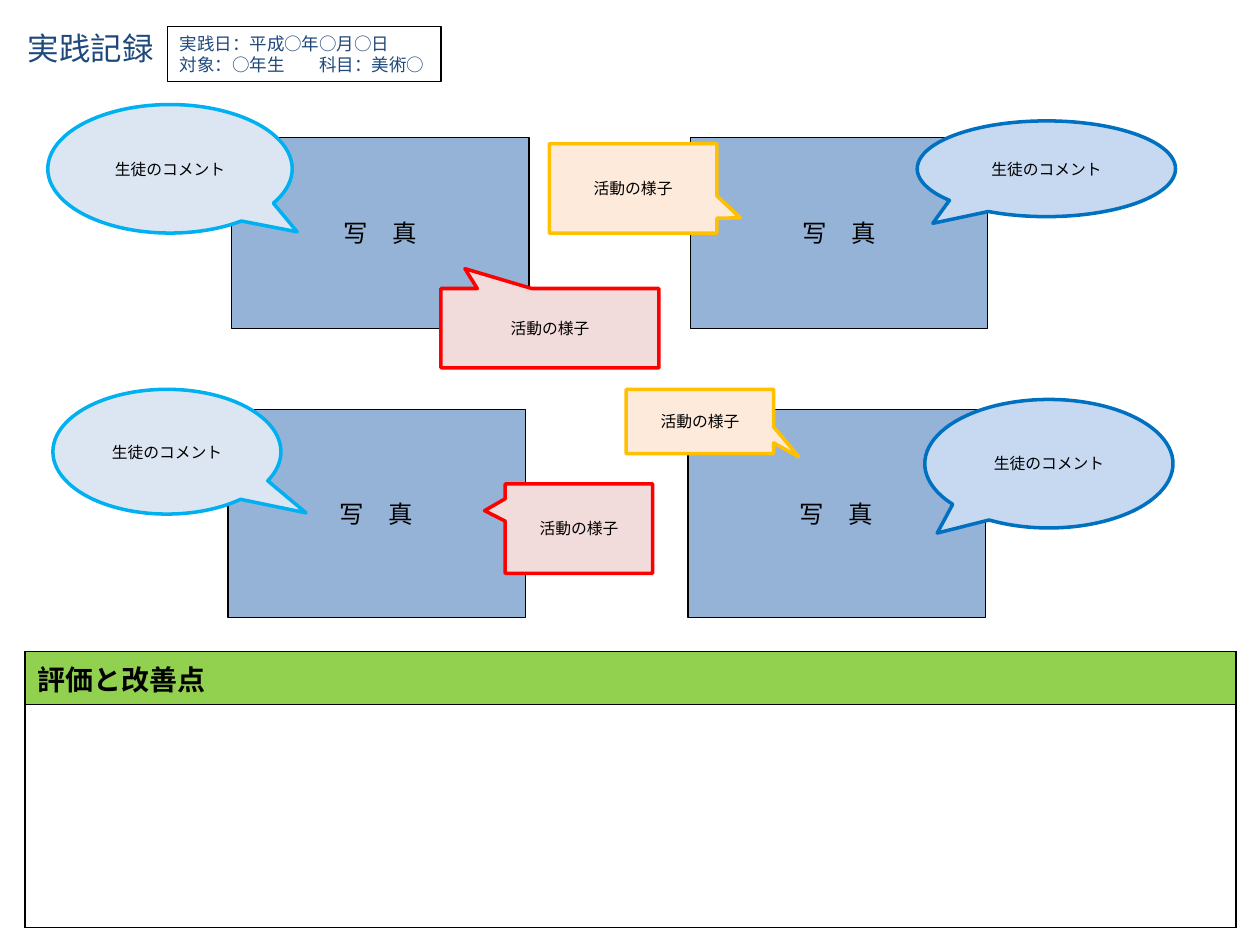
"""Build a one-page practice record with photo areas, comments and an evaluation table."""
from lxml import etree
from pptx import Presentation
from pptx.dml.color import RGBColor
from pptx.enum.shapes import MSO_SHAPE
from pptx.enum.text import MSO_ANCHOR, PP_ALIGN
from pptx.oxml.ns import qn
from pptx.util import Inches, Pt

RECTANGLE = MSO_SHAPE.RECTANGLE
OVAL_CALLOUT = MSO_SHAPE.OVAL_CALLOUT
RECT_CALLOUT = MSO_SHAPE.RECTANGULAR_CALLOUT
TOP, MIDDLE = MSO_ANCHOR.TOP, MSO_ANCHOR.MIDDLE
LEFT, CENTER = PP_ALIGN.LEFT, PP_ALIGN.CENTER

BLACK = RGBColor(0x00, 0x00, 0x00)
WHITE = RGBColor(0xFF, 0xFF, 0xFF)
NAVY = RGBColor(0x1F, 0x49, 0x7D)
GREEN = RGBColor(0x92, 0xD0, 0x50)
PHOTO_BLUE = RGBColor(0x95, 0xB3, 0xD7)
PALE_BLUE = RGBColor(0xDC, 0xE6, 0xF2)
SKY = RGBColor(0x00, 0xB0, 0xF0)
LIGHT_BLUE = RGBColor(0xC6, 0xD9, 0xF1)
BLUE = RGBColor(0x00, 0x70, 0xC0)
PINK = RGBColor(0xF2, 0xDC, 0xDB)
RED = RGBColor(0xFF, 0x00, 0x00)
CREAM = RGBColor(0xFD, 0xEA, 0xDA)
AMBER = RGBColor(0xFF, 0xC0, 0x00)


def write(frame, text, size, font="Arial", color=BLACK, bold=False,
          align=LEFT, anchor=TOP, wrap=True):
    frame.word_wrap = wrap
    frame.vertical_anchor = anchor
    for number, line in enumerate(text.split("\n")):
        para = frame.paragraphs[0] if number == 0 else frame.add_paragraph()
        para.alignment = align
        span = para.add_run()
        span.text = line
        span.font.size = Pt(size)
        span.font.name = font
        span.font.bold = bold
        span.font.color.rgb = color


def add_box(kind, place, fill=None, line=BLACK, width=0.75):
    box = page.shapes.add_shape(kind, *[Inches(length) for length in place])
    box.shadow.inherit = False
    if fill is None:
        box.fill.background()
    else:
        box.fill.solid()
        box.fill.fore_color.rgb = fill
    box.line.color.rgb = line
    box.line.width = Pt(width)
    return box


deck = Presentation()
deck.slide_width, deck.slide_height = Inches(10), Inches(7.5)
page = deck.slides.add_slide(deck.slide_layouts[5])

title = page.shapes.title
title.left, title.top = Inches(0.12), Inches(0.18)
title.width, title.height = Inches(1.21), Inches(0.4)
write(title.text_frame, "実践記録", 18, color=NAVY, wrap=False)

table_frame = page.shapes.add_table(
    2, 1, Inches(0.2), Inches(5.17), Inches(9.61), Inches(2.14))
table = table_frame.table
table.first_row = table.horz_banding = False
for row, height, fill in zip(table.rows, (0.37, 1.77), (GREEN, WHITE)):
    row.height = Inches(height)
    cell = row.cells[0]
    properties = cell._tc.get_or_add_tcPr()
    for side in ("a:lnL", "a:lnR", "a:lnT", "a:lnB"):
        border = etree.SubElement(properties, qn(side), w=str(Pt(1)))
        paint = etree.SubElement(border, qn("a:solidFill"))
        etree.SubElement(paint, qn("a:srgbClr"), val=str(BLACK))
    cell.fill.solid()
    cell.fill.fore_color.rgb = fill
write(table.cell(0, 0).text_frame, "評価と改善点", 16, bold=True)

details = add_box(RECTANGLE, (1.33, 0.21, 2.17, 0.44))
write(details.text_frame, "実践日：平成○年○月○日　\n対象：○年生　　科目：美術○", 10, color=NAVY)

photo_places = [
    (1.84, 1.09, 2.36, 1.52), (5.48, 1.09, 2.36, 1.52),
    (1.81, 3.25, 2.36, 1.65), (5.46, 3.25, 2.36, 1.65),
]
for place in photo_places:
    photo = add_box(RECTANGLE, place, PHOTO_BLUE)
    write(photo.text_frame, "写　真", 14, align=CENTER, anchor=MIDDLE, wrap=False)

COMMENT, ACTIVITY = "生徒のコメント", "活動の様子"
callout_groups = [
    (OVAL_CALLOUT, COMMENT, PALE_BLUE, SKY, [
        ((0.38, 0.83, 1.94, 1.02), (0.52, 0.49)),
        ((0.42, 3.09, 1.81, 0.99), (0.61, 0.49))]),
    (RECT_CALLOUT, ACTIVITY, PINK, RED, [
        ((3.5, 2.29, 1.73, 0.63), (-0.39, -0.75)),
        ((4.01, 3.84, 1.17, 0.71), (-0.64, -0.2))]),
    (OVAL_CALLOUT, COMMENT, LIGHT_BLUE, BLUE, [
        ((7.28, 0.96, 2.05, 0.76), (-0.44, 0.57)),
        ((7.34, 3.17, 1.97, 1.02), (-0.45, 0.54))]),
    (RECT_CALLOUT, ACTIVITY, CREAM, AMBER, [
        ((4.97, 3.09, 1.17, 0.51), (0.67, 0.55)),
        ((4.36, 1.14, 1.33, 0.71), (0.64, 0.33))]),
]
for kind, text, fill, line, callouts in callout_groups:
    for place, pointer in callouts:
        callout = add_box(kind, place, fill, line, 2)
        callout.adjustments[0], callout.adjustments[1] = pointer
        write(callout.text_frame, text, 9, "Calibri", align=CENTER, anchor=MIDDLE)

deck.save("out.pptx")
